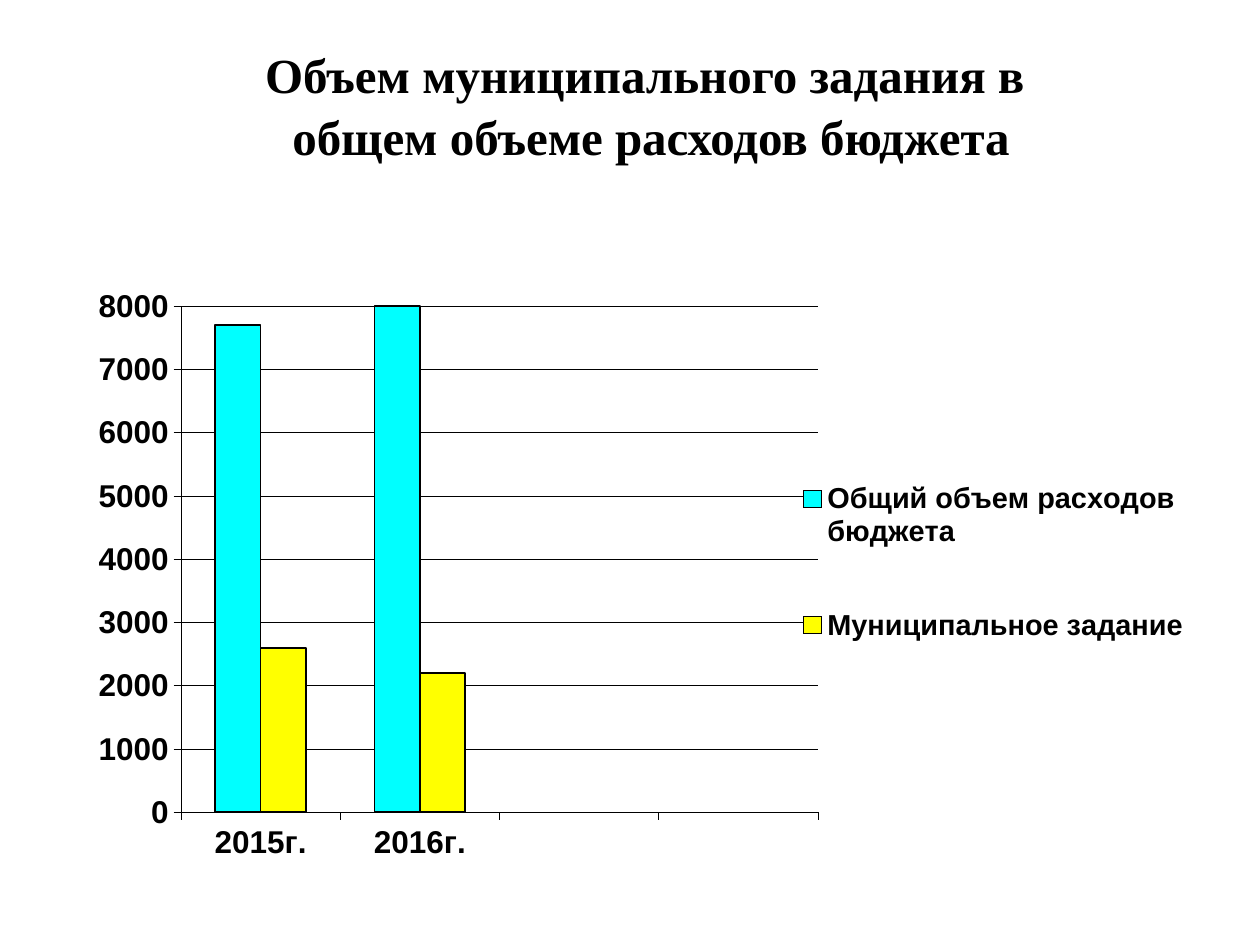
from dataclasses import dataclass

from lxml.etree import SubElement
from pptx import Presentation
from pptx.chart.data import CategoryChartData
from pptx.dml.color import RGBColor
from pptx.enum.chart import (XL_CHART_TYPE, XL_LEGEND_POSITION,
                             XL_TICK_LABEL_POSITION, XL_TICK_MARK)
from pptx.enum.text import MSO_ANCHOR, PP_ALIGN
from pptx.oxml.ns import qn
from pptx.util import Pt


@dataclass(frozen=True)
class Theme:
    ink: RGBColor = RGBColor(0, 0, 0)
    total: RGBColor = RGBColor(0, 255, 255)
    task: RGBColor = RGBColor(255, 255, 0)
    title_font: str = "Times New Roman"
    chart_font: str = "Arial"
    title_size: float = 28
    axis_size: float = 18
    legend_size: float = 16.5
    hairline: float = 0.25
    outline: float = 1


THEME = Theme()
TITLE = ["Объем муниципального задания в ", "общем объеме расходов бюджета"]
CATEGORIES = ["2015г.", "2016г.", "", ""]
SERIES = [
    ("Общий объем расходов бюджета", [7700, 8000, None, None], THEME.total),
    ("Муниципальное задание", [2600, 2200, None, None], THEME.task),
]


def style_font(font, name, size):
    font.name = name
    font.size = Pt(size)
    font.bold = True
    font.color.rgb = THEME.ink


def style_line(line, width):
    line.color.rgb = THEME.ink
    line.width = Pt(width)


def set_layout(parent, index, x, y, w, h, inner=False):
    """Place a chart part by fractions of the chart area."""
    for old in parent.findall(qn("c:layout")):
        parent.remove(old)
    layout = SubElement(parent, qn("c:layout"))
    parent.insert(index, layout)
    manual = SubElement(layout, qn("c:manualLayout"))
    values = {"layoutTarget": "inner"} if inner else {}
    values.update(xMode="edge", yMode="edge", x=x, y=y, w=w, h=h)
    for tag, value in values.items():
        SubElement(manual, qn(f"c:{tag}")).set("val", str(value))


def add_title(slide, left, top, width, height):
    tf = slide.shapes.add_textbox(Pt(left), Pt(top), Pt(width), Pt(height)).text_frame
    tf.word_wrap = True
    tf.vertical_anchor = MSO_ANCHOR.TOP
    tf.margin_top = Pt(7.5)
    for i, text in enumerate(TITLE):
        p = tf.add_paragraph() if i else tf.paragraphs[0]
        p.alignment = PP_ALIGN.CENTER
        p.space_before = Pt(1.5 if i else 0)
        r = p.add_run()
        r.text = text
        style_font(r.font, THEME.title_font, THEME.title_size)


def style_axes(chart):
    for axis in (chart.category_axis, chart.value_axis):
        axis.major_tick_mark = XL_TICK_MARK.OUTSIDE
        axis.minor_tick_mark = XL_TICK_MARK.NONE
        style_font(axis.tick_labels.font, THEME.chart_font, THEME.axis_size)
        style_line(axis.format.line, THEME.hairline)
    chart.category_axis.tick_label_position = XL_TICK_LABEL_POSITION.LOW
    values = chart.value_axis
    values.minimum_scale, values.maximum_scale, values.major_unit = 0, 8000, 1000
    values.has_major_gridlines = True
    style_line(values.major_gridlines.format.line, THEME.hairline)


def add_budget_chart(slide, left, top, width, height):
    data = CategoryChartData(number_format="General")
    data.categories = CATEGORIES
    for name, values, _ in SERIES:
        data.add_series(name, values)
    chart = slide.shapes.add_chart(XL_CHART_TYPE.COLUMN_CLUSTERED, Pt(left), Pt(top),
                                   Pt(width), Pt(height), data).chart
    chart.has_title = False
    style_font(chart.font, THEME.chart_font, THEME.axis_size)
    style_axes(chart)

    plot = chart.plots[0]
    plot.gap_width = 150
    plot.overlap = 0
    plot.vary_by_categories = False
    for series, (_, _, color) in zip(plot.series, SERIES):
        series.format.fill.solid()
        series.format.fill.fore_color.rgb = color
        style_line(series.format.line, THEME.outline)

    chart.has_legend = True
    legend = chart.legend
    legend.position = XL_LEGEND_POSITION.RIGHT
    legend.include_in_layout = False
    style_font(legend.font, THEME.chart_font, THEME.legend_size)

    plot_area = chart.element.find(".//" + qn("c:plotArea"))
    set_layout(plot_area, 0, 0.09, 0.05, 0.57, 0.83, inner=True)
    set_layout(chart.element.find(".//" + qn("c:legend")), 1, 0.65, 0.24, 0.35, 0.46)


def main():
    prs = Presentation()
    prs.slide_width, prs.slide_height = Pt(720), Pt(540)
    s = prs.slides.add_slide(prs.slide_layouts[6])
    add_title(s, 48, 18, 648, 90)
    add_budget_chart(s, 46, 157.5, 638.5, 348.5)
    prs.save("out.pptx")


if __name__ == "__main__":
    main()
